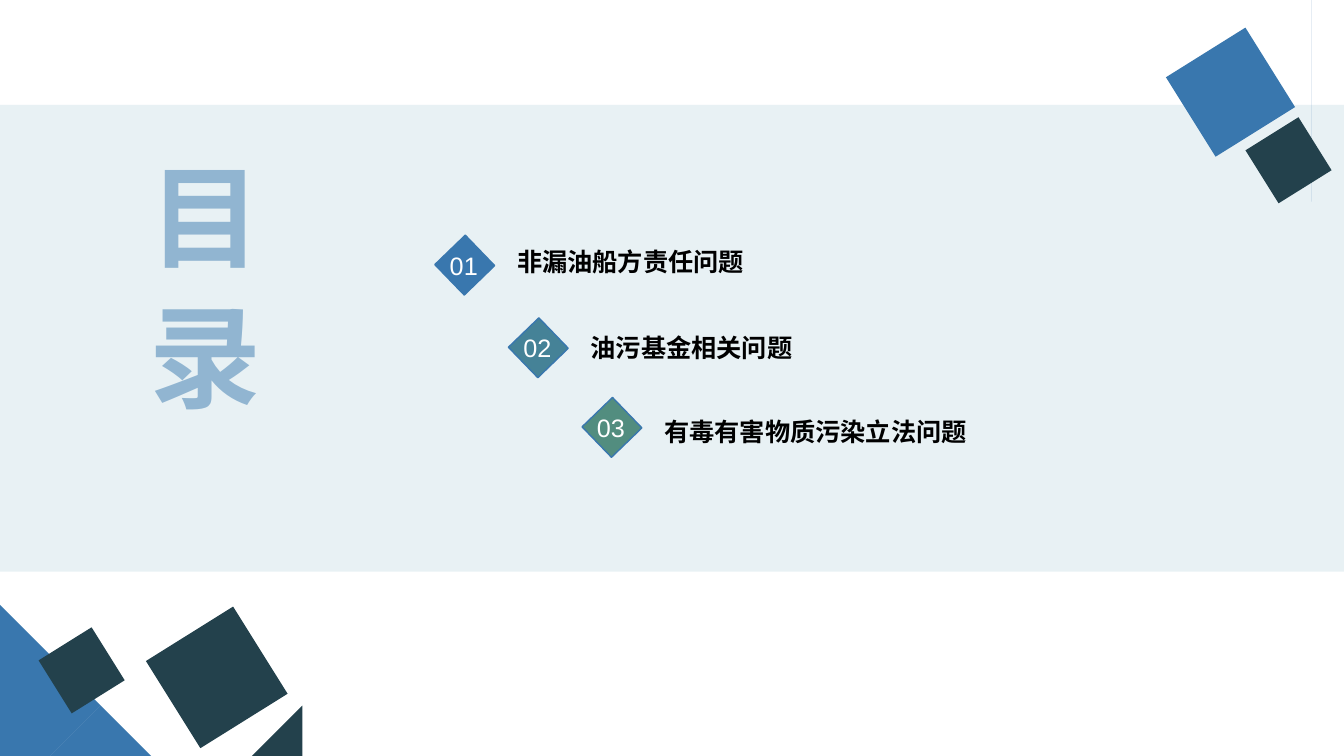
from pptx import Presentation
from pptx.dml.color import RGBColor
from pptx.enum.shapes import MSO_SHAPE as SHAPE
from pptx.enum.text import MSO_ANCHOR as ANCHOR, MSO_AUTO_SIZE as AUTO, PP_ALIGN as ALIGN
from pptx.oxml.ns import qn
from pptx.util import Inches, Pt
from lxml import etree

W, H = 13.33, 7.5
BLUE, DARK, BAND = "3977AE", "23414C", "D7E7ED"
CJK = "Noto Sans CJK SC"
TILT = 328


def paint(sp, color, line=None):
    sp.shadow.inherit = False
    sp.fill.solid()
    sp.fill.fore_color.rgb = RGBColor.from_string(color)
    if line:
        sp.line.color.rgb = RGBColor.from_string(line)
        sp.line.width = Pt(1)
    else:
        sp.line.fill.background()


def write(sp, text, align, anchor, color, **font):
    tf = sp.text_frame
    tf.word_wrap, tf.auto_size, tf.vertical_anchor = True, AUTO.NONE, anchor
    p = tf.paragraphs[0]
    p.alignment = align
    r = p.add_run()
    r.text = text
    for name, value in font.items():
        setattr(r.font, name, value)
    r.font.color.rgb = RGBColor.from_string(color)
    etree.SubElement(r.font._element, qn("a:ea"), typeface=CJK)


prs = Presentation()
prs.slide_width, prs.slide_height = Inches(W), Inches(H)
s = prs.slides.add_slide(prs.slide_layouts[5])
shapes = s.shapes

# Pale band across the slide
band = shapes.add_shape(SHAPE.FLOWCHART_PROCESS, 0, Inches(1.04), Inches(W), Inches(4.63))
paint(band, BAND)
rgb = band.fill._xPr.find(".//" + qn("a:srgbClr"))
etree.SubElement(rgb, qn("a:alpha"), val="56000")

# Corner blocks cut off by the slide edges
cut_blocks = [
    (BLUE, [(1.84, H), (1.43, 6.84), (0.38, H)]),
    (DARK, [(2.92, H), (2.73, 7.19), (2.24, H)]),
    (BLUE, [(0.64, 7.22), (0.15, 6.43), (0, 6.52), (0, H), (0.2, H)]),
    (BLUE, [(W, 0), (W, 1.58), (12.53, 0.3), (13.01, 0)]),
]
for color, points in cut_blocks:
    outline = shapes.build_freeform(*points[0], scale=Inches(1))
    outline.add_line_segments(points[1:], close=True)
    paint(outline.convert_to_shape(), color)

# Whole tilted squares: left, top, side
squares = [
    (DARK, 1.64, 6.21, 1.02),
    (DARK, 0.5, 6.34, 0.62),
    (DARK, 12.47, 1.28, 0.62),
    (BLUE, 11.74, 0.45, 0.93),
]
for color, x, y, side in squares:
    sp = shapes.add_shape(SHAPE.RECTANGLE, Inches(x), Inches(y), Inches(side), Inches(side))
    sp.rotation = TILT
    paint(sp, color)

# Agenda steps down to the right: marker top, label top
items = [
    ("非漏油船方责任问题", BLUE, 2.42, 2.27),
    ("油污基金相关问题", "458297", 3.24, 3.12),
    ("有毒有害物质污染立法问题", "528D7F", 4.03, 3.95),
]
for i, (text, color, marker_y, label_y) in enumerate(items):
    x = 4.4 + 0.73 * i
    marker = shapes.add_shape(SHAPE.RECTANGLE, Inches(x), Inches(marker_y), Inches(0.42), Inches(0.42))
    marker.rotation = 316
    paint(marker, color, BLUE)
    number = shapes.add_textbox(Inches(x - 0.22), Inches(marker_y + 0.01), Inches(0.84), Inches(0.4))
    write(number, f"{i + 1:02}", ALIGN.CENTER, ANCHOR.TOP, "FFFFFF", size=Pt(18), name="Arial")
    label = shapes.add_textbox(Inches(x + 0.63), Inches(label_y), Inches(5.6), Inches(0.65))
    write(label, text, ALIGN.LEFT, ANCHOR.MIDDLE, "000000", size=Pt(18), name=CJK, bold=True)

# Vertical title
title = shapes.title
title.left, title.top, title.width, title.height = map(Inches, (0.76, 1.55, 2.01, 3.59))
write(title, "目 录", ALIGN.LEFT, ANCHOR.TOP, BLUE, size=Pt(80), name="Arial", bold=True)
title.text_frame._txBody.bodyPr.set("vert", "eaVert")

prs.save("out.pptx")
